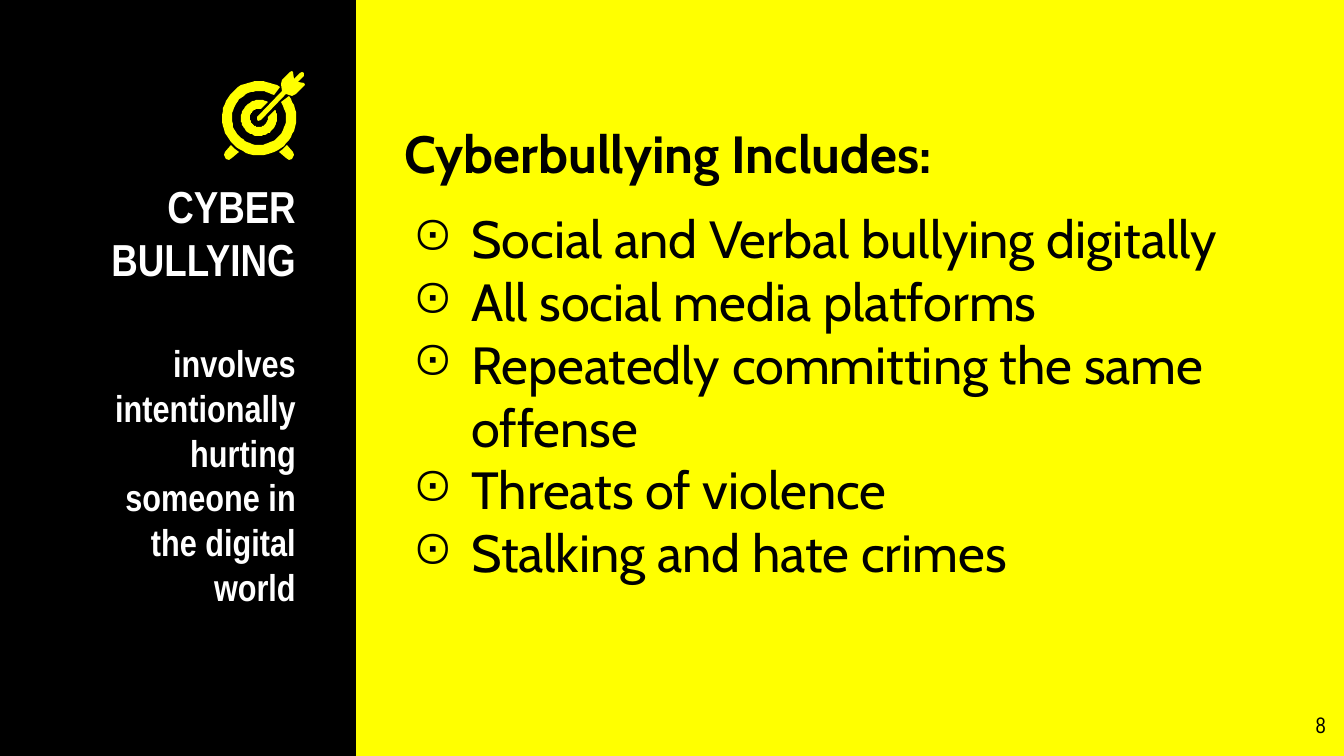
from math import cos, radians, sin

from lxml.etree import SubElement
from pptx import Presentation
from pptx.dml.color import RGBColor
from pptx.enum.shapes import MSO_SHAPE
from pptx.enum.text import PP_ALIGN
from pptx.oxml.ns import qn
from pptx.util import Inches, Pt

PX = 914400 / 134.4
INK = {"black": "000000", "white": "FFFFFF", "yellow": "FFFF00"}


def write(box, lines, font="Arial Narrow", color="black", align=PP_ALIGN.LEFT):
    """Put lines of (text, size, bold, space before, bullet) in a new text box."""
    left, top, width, height = [round(n * PX) for n in box]
    frame = slide.shapes.add_textbox(left, top, width, height).text_frame
    frame.word_wrap = True
    frame.margin_left = frame.margin_right = Inches(0.1)
    frame.margin_top = frame.margin_bottom = Inches(0.1)
    for i, (text, size, bold, gap, mark) in enumerate(lines):
        para = frame.paragraphs[0] if i == 0 else frame.add_paragraph()
        para.alignment = align
        para.space_before = Pt(gap)
        run = para.add_run()
        run.text = text
        run.font.name = font
        run.font.size = Pt(size)
        run.font.bold = bold
        run.font.color.rgb = RGBColor.from_string(INK[color])
        if mark:
            props = para._p.get_or_add_pPr()
            props.set("marL", str(Inches(0.5)))
            props.set("indent", str(-Inches(0.44)))
            tint = SubElement(props, qn("a:buClr"))
            SubElement(tint, qn("a:srgbClr"), val=INK[color])
            SubElement(props, qn("a:buChar"), char=mark)


def paint(shape, color):
    shape.shadow.inherit = False
    shape.fill.solid()
    shape.fill.fore_color.rgb = RGBColor.from_string(INK[color])
    shape.line.fill.background()


deck = Presentation()
deck.slide_width = round(1344 * PX)
deck.slide_height = round(756 * PX)
slide = deck.slides.add_slide(deck.slide_layouts[6])
slide.background.fill.solid()
slide.background.fill.fore_color.rgb = RGBColor.from_string(INK["yellow"])

# Side panel
panel = slide.shapes.add_shape(MSO_SHAPE.RECTANGLE, 0, 0, round(356 * PX), deck.slide_height)
paint(panel, "black")

# Side text
write((59, 165, 250, 337), [
    ("CYBER", 24, True, 0, None),
    ("BULLYING", 24, True, 0, None),
    ("involves intentionally hurting someone in the digital world", 20, True, 29, None),
], color="white", align=PP_ALIGN.RIGHT)

# Main text
items = [
    "Social and Verbal bullying digitally",
    "All social media platforms",
    "Repeatedly committing the same offense",
    "Threats of violence",
    "Stalking and hate crimes",
]
lines = [("Cyberbullying Includes:", 28, True, 0, None)]
for i, item in enumerate(items):
    lines.append((item, 28, False, 12 if i == 0 else 0, "⊙"))
write((391, 108, 937, 586), lines, font="Cabin")

# Target rings: each arc is (radius, start angle, end angle), open at top right
mid_x, mid_y = 259, 118
rings = [
    [(37, -37, 304), (27, 303, -37)],
    [(18, -28, 299), (9, 280, -9)],
]
icon = []
for ring in rings:
    points = []
    for radius, start, end in ring:
        for step in range(61):
            turn = radians(start + (end - start) * step / 60)
            points.append((mid_x + radius * cos(turn), mid_y + radius * sin(turn)))
    icon.append(points)

# Target feet: the right one mirrors the left
foot = [(231, 145), (225, 152), (224, 155), (226, 159), (229, 160),
        (232, 158), (239, 152), (235, 149)]
icon += [foot, [(2 * mid_x - x, y) for x, y in foot]]

# Dart
icon.append([
    (292, 71), (290, 72), (282, 80), (281, 84), (282, 91), (257, 117), (257, 119),
    (258, 121), (261, 120), (286, 94), (292, 96), (296, 94), (305, 85), (304, 83),
    (298, 82), (304, 76), (304, 73), (302, 72), (300, 73), (294, 79), (293, 72),
])
for points in icon:
    pen = slide.shapes.build_freeform(*points[0], scale=PX)
    pen.add_line_segments(points[1:], close=True)
    paint(pen.convert_to_shape(), "yellow")

# Page number
write((1258, 698, 81, 58), [("8", 12, False, 0, None)], align=PP_ALIGN.RIGHT)

deck.save("out.pptx")
